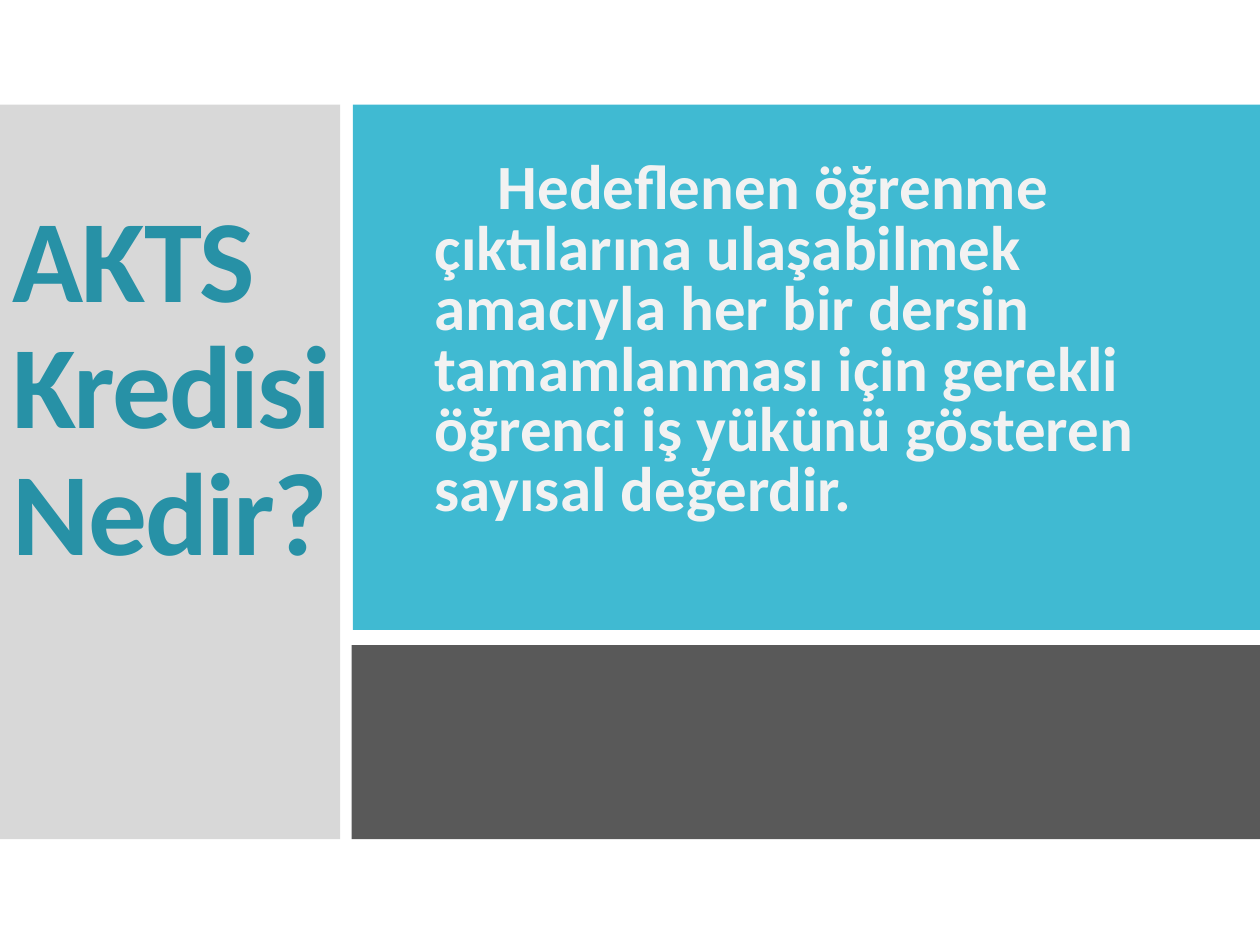
from dataclasses import dataclass

from lxml.etree import SubElement
from pptx import Presentation
from pptx.dml.color import RGBColor
from pptx.enum.shapes import MSO_SHAPE
from pptx.enum.text import MSO_ANCHOR, MSO_AUTO_SIZE, PP_ALIGN
from pptx.oxml.ns import qn
from pptx.util import Inches, Pt


@dataclass(frozen=True)
class Theme:
    font: str = "Calibri"
    title_size: int = 67
    body_size: int = 36
    title_color: str = "2791A6"
    body_color: str = "F2F2F2"
    side: str = "C8C8C8"
    main: str = "40BAD2"
    footer: str = "595959"


class SlideBuilder:
    def __init__(self, slide, theme):
        self.slide = slide
        self.theme = theme

    def panel(self, left, top, width, height, color, opacity=None):
        """Draw a plain filled rectangle, optionally see-through."""
        panel = self.slide.shapes.add_shape(
            MSO_SHAPE.RECTANGLE,
            Inches(left), Inches(top), Inches(width), Inches(height))
        panel.shadow.inherit = False
        panel.line.fill.background()
        panel.fill.solid()
        panel.fill.fore_color.rgb = RGBColor.from_string(color)
        if opacity is not None:
            rgb = panel.fill._xPr.find(".//" + qn("a:srgbClr"))
            SubElement(rgb, qn("a:alpha")).set("val", str(opacity * 1000))

    def placeholder(self, holder, box, text, size, color, anchor, line_spacing):
        """Fill a placeholder, place it in front and return its paragraph."""
        holder.left, holder.top, holder.width, holder.height = map(Inches, box)
        self.slide.shapes._spTree.append(holder._element)
        frame = holder.text_frame
        frame.text = text
        frame.word_wrap = True
        frame.auto_size = MSO_AUTO_SIZE.NONE
        frame.vertical_anchor = anchor
        paragraph = frame.paragraphs[0]
        paragraph.alignment = PP_ALIGN.LEFT
        paragraph.line_spacing = line_spacing
        font = paragraph.font
        font.name = self.theme.font
        font.size = Pt(size)
        font.bold = True
        font.color.rgb = RGBColor.from_string(color)
        return paragraph

    def title(self, box, text, bottom_inset):
        holder = self.slide.shapes.title
        paragraph = self.placeholder(
            holder, box, text, self.theme.title_size,
            self.theme.title_color, MSO_ANCHOR.BOTTOM, 0.9)
        holder.text_frame.margin_bottom = Inches(bottom_inset)
        # Tighten the letters by one point
        paragraph.runs[0]._r.get_or_add_rPr().set("spc", "-100")

    def body(self, box, text, first_line):
        paragraph = self.placeholder(
            self.slide.placeholders[1], box, text, self.theme.body_size,
            self.theme.body_color, MSO_ANCHOR.TOP, 0.8)
        paragraph.space_before = Pt(12)
        paragraph._p.get_or_add_pPr().set("indent", str(Inches(first_line)))


def main():
    presentation = Presentation()
    presentation.slide_width = Inches(10)
    presentation.slide_height = Inches(7.5)
    theme = Theme()
    slide = presentation.slides.add_slide(presentation.slide_layouts[0])
    builder = SlideBuilder(slide, theme)

    # Colour panels
    builder.panel(0, 0.83, 2.7, 5.83, theme.side, opacity=70)
    builder.panel(2.8, 0.83, 7.2, 4.17, theme.main)
    builder.panel(2.79, 5.12, 7.21, 1.54, theme.footer)

    # Definition and heading
    builder.body(
        (3.35, 1.23, 6.3, 3.31),
        "Hedeflenen öğrenme çıktılarına ulaşabilmek amacıyla her bir dersin "
        "tamamlanması için gerekli öğrenci iş yükünü gösteren sayısal değerdir.",
        first_line=0.5)
    builder.title((0, 1.5, 2.97, 3.97), "AKTS Kredisi Nedir?", bottom_inset=0.86)

    presentation.save("out.pptx")


if __name__ == "__main__":
    main()
